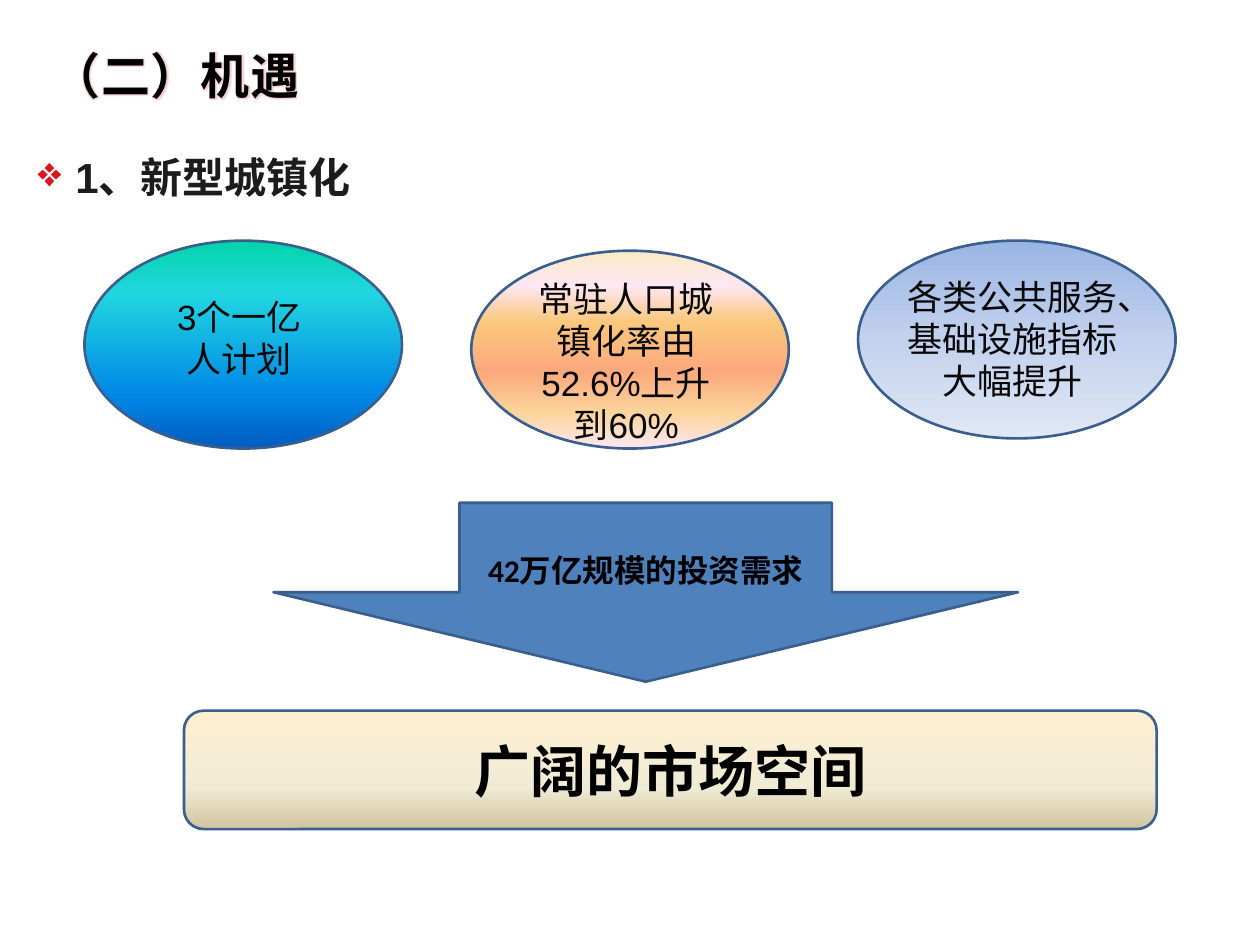
import pptx
import pptx.dml.color
import pptx.enum.shapes
import pptx.enum.text
import pptx.oxml
import pptx.oxml.ns
import pptx.util

Inches, Pt = pptx.util.Inches, pptx.util.Pt
SHAPE = pptx.enum.shapes.MSO_SHAPE
CENTER = pptx.enum.text.PP_ALIGN.CENTER
LEFT = pptx.enum.text.PP_ALIGN.LEFT
NS = pptx.oxml.ns.nsdecls("a")
CJK = "Noto Sans CJK SC"


def rgb(color):
    return pptx.dml.color.RGBColor.from_string(color)


def xml(text):
    """Build one DrawingML element, given without its namespace."""
    tag, rest = text[1:].split(" ", 1)
    return pptx.oxml.parse_xml(f"<{tag} {NS} {rest}")


class Deck:
    line_color, line_width = "3A5F8C", 1.5

    def __init__(self):
        self.prs = pptx.Presentation()
        self.prs.slide_width, self.prs.slide_height = Inches(10), Inches(7.5)
        self.s = self.prs.slides.add_slide(self.prs.slide_layouts[6])

    def run(self, p, text, size, color, font="Arial", bold=False, align=CENTER):
        p.alignment = align
        r = p.add_run()
        r.text = text
        r.font.size, r.font.bold, r.font.name = Pt(size), bold, font
        r.font.color.rgb = rgb(color)
        latin = r._r.get_or_add_rPr().find(pptx.oxml.ns.qn("a:latin"))
        latin.addnext(xml(f'<a:ea typeface="{CJK}"/>'))
        return r

    def text(self, box, text, size, color, bullet=None, **style):
        tf = self.s.shapes.add_textbox(*map(Inches, box)).text_frame
        tf.word_wrap = True
        tf.auto_size = pptx.enum.text.MSO_AUTO_SIZE.SHAPE_TO_FIT_TEXT
        p = tf.paragraphs[0]
        if bullet:
            char, bullet_color = bullet
            ppr = p._p.get_or_add_pPr()
            ppr.set("marL", str(Inches(0.3)))
            ppr.set("indent", str(Inches(-0.3)))
            ppr.append(xml(f'<a:buClr ><a:srgbClr val="{bullet_color}"/></a:buClr>'))
            ppr.append(xml(f'<a:buChar char="{char}"/>'))
        return self.run(p, text, size, color, **style)

    def shape(self, kind, box, fill, text=None, size=18):
        """Draw a preset shape; fill is a colour or a list of gradient stops."""
        sp = self.s.shapes.add_shape(kind, *map(Inches, box))
        sp.shadow.inherit = False
        sp.line.color.rgb, sp.line.width = rgb(self.line_color), Pt(self.line_width)
        if isinstance(fill, str):
            sp.fill.solid()
            sp.fill.fore_color.rgb = rgb(fill)
        else:
            self.gradient(sp, fill)
        if text:
            tf = sp.text_frame
            tf.word_wrap = True
            tf.vertical_anchor = pptx.enum.text.MSO_ANCHOR.MIDDLE
            self.run(tf.paragraphs[0], text, size, "000000", "Calibri", True)

    def gradient(self, sp, stops):
        sp.fill.gradient()
        grad = sp._element.spPr.find(pptx.oxml.ns.qn("a:gradFill"))
        gs = "".join(f'<a:gs pos="{pos * 1000}"><a:srgbClr val="{color}"/></a:gs>'
                     for pos, color in stops)
        grad.getparent().replace(grad, xml(
            f'<a:gradFill rotWithShape="1"><a:gsLst>{gs}</a:gsLst>'
            '<a:lin ang="5400000" scaled="0"/></a:gradFill>'))

    def glow(self, r):
        """Space a run out, with a faint outline and a soft red glow."""
        rpr = r._r.get_or_add_rPr()
        rpr.set("spc", "50")
        rpr.insert(0, xml(
            f'<a:ln w="{Pt(1.06)}"><a:solidFill><a:srgbClr val="101A26">'
            '<a:alpha val="6000"/></a:srgbClr></a:solidFill></a:ln>'))
        rpr.insert(2, xml(
            f'<a:effectLst ><a:glow rad="{Pt(3)}"><a:srgbClr val="D7181F">'
            '<a:alpha val="20000"/></a:srgbClr></a:glow></a:effectLst>'))


def main():
    deck = Deck()

    # Three ellipses
    blue = [(0, "9AB5E4"), (50, "C2D1ED"), (100, "E1E8F5")]
    peach = [(0, "FBEAC7"), (18, "FEE7F2"), (36, "FAC77D"),
             (61, "FBA97D"), (82, "FBD49C"), (100, "FEE7F2")]
    ocean = [(0, "03D4A8"), (25, "21D6E0"), (75, "0087E6"), (100, "005CBF")]
    for left, top, height, stops in [(6.81, 1.91, 1.57, blue),
                                     (3.74, 1.99, 1.57, peach),
                                     (0.67, 1.91, 1.65, ocean)]:
        deck.shape(SHAPE.OVAL, (left, top, 2.52, height), stops)

    # Headings
    title = deck.text((0.31, 0.31, 5.4, 0.57), "（二）机遇", 28, "000000",
                      font=CJK, bold=True, align=LEFT)
    deck.glow(title)
    deck.text((0.2, 1.15, 8.03, 0.5), "1、新型城镇化", 24, "1C1C1C",
              bullet=("❖", "D7181F"), bold=True, align=LEFT)

    # Ellipse captions
    for box, caption in [
            ((1.22, 2.3, 1.36, 0.77), "3个一亿人计划"),
            ((4.07, 2.15, 1.8, 1.45), "常驻人口城镇化率由52.6%上升到60%"),
            ((7.06, 2.14, 1.95, 1.11), "各类公共服务、基础设施指标大幅提升")]:
        deck.text(box, caption, 20, "080808")

    # Arrow down to the conclusion
    deck.shape(SHAPE.DOWN_ARROW, (2.17, 3.99, 5.91, 1.42), "4F81BD",
               "42万亿规模的投资需求", 18)
    deck.shape(SHAPE.ROUNDED_RECTANGLE, (1.46, 5.64, 7.72, 0.94),
               [(0, "FFEFD1"), (65, "F0EBD5"), (100, "D1C39F")],
               "广阔的市场空间", 32)

    deck.prs.save("out.pptx")


if __name__ == "__main__":
    main()
